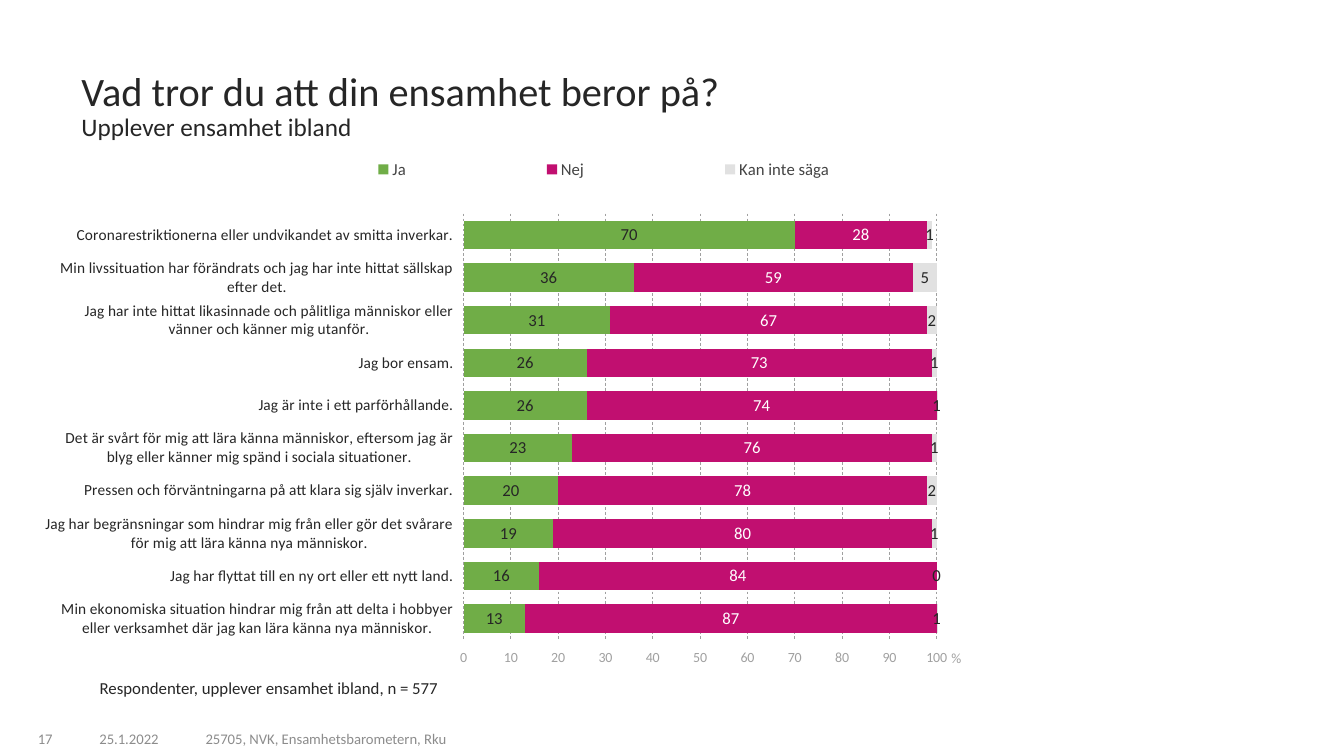
from lxml import etree
from pptx import Presentation
from pptx.chart.data import CategoryChartData
from pptx.dml.color import RGBColor
from pptx.enum.chart import (XL_CHART_TYPE, XL_LABEL_POSITION, XL_LEGEND_POSITION,
                             XL_TICK_LABEL_POSITION, XL_TICK_MARK)
from pptx.enum.dml import MSO_LINE
from pptx.enum.text import MSO_ANCHOR, PP_ALIGN
from pptx.oxml.ns import qn
from pptx.util import Inches, Pt

FONT = "Calibri"
INK = RGBColor(0x26, 0x26, 0x26)
BLACK = RGBColor(0, 0, 0)
WHITE = RGBColor(0xFF, 0xFF, 0xFF)
FOOTER_GREY = RGBColor(0x8C, 0x8C, 0x8C)
AXIS_GREY = RGBColor(0xA0, 0xA0, 0xA0)
LEGEND_GREY = RGBColor(0x44, 0x44, 0x44)
GREEN = RGBColor(0x70, 0xAD, 0x47)
MAGENTA = RGBColor(0xC1, 0x0F, 0x70)
PALE_GREY = RGBColor(0xE1, 0xE1, 0xE1)

REASONS = [
    "Coronarestriktionerna eller undvikandet av smitta inverkar.",
    "Min livssituation har förändrats och jag har inte hittat sällskap efter det.",
    "Jag har inte hittat likasinnade och pålitliga människor eller vänner och känner mig utanför.",
    "Jag bor ensam.",
    "Jag är inte i ett parförhållande.",
    "Det är svårt för mig att lära känna människor, eftersom jag är blyg eller känner mig spänd "
    "i sociala situationer.",
    "Pressen och förväntningarna på att klara sig själv inverkar.",
    "Jag har begränsningar som hindrar mig från eller gör det svårare för mig att lära känna nya "
    "människor.",
    "Jag har flyttat till en ny ort eller ett nytt land.",
    "Min ekonomiska situation hindrar mig från att delta i hobbyer eller verksamhet där jag kan "
    "lära känna nya människor.",
]
# Answer, shares in percent, bar colour, label colour
ANSWERS = [
    ("Ja", (70, 36, 31, 26, 26, 23, 20, 19, 16, 13), GREEN, INK),
    ("Nej", (28, 59, 67, 73, 74, 76, 78, 80, 84, 87), MAGENTA, WHITE),
    ("Kan inte säga", (1, 5, 2, 1, 1, 1, 2, 1, 0, 1), PALE_GREY, INK),
]


def set_font(font, size, color):
    font.name = FONT
    font.size = Pt(size)
    font.bold = False
    font.color.rgb = color


def add_text(slide, box, text, sizes, color, align=PP_ALIGN.LEFT,
             anchor=MSO_ANCHOR.TOP, line_spacing=None):
    """Place one paragraph; sizes holds one size for each line."""
    frame = slide.shapes.add_textbox(*map(Inches, box)).text_frame
    frame.word_wrap = True
    frame.vertical_anchor = anchor
    paragraph = frame.paragraphs[0]
    paragraph.text = text
    paragraph.alignment = align
    paragraph.line_spacing = line_spacing
    for run, size in zip(paragraph.runs, sizes):
        set_font(run.font, size, color)


def set_layout(parent, index, chart_size, place, inner=False):
    """Place a chart part at left, top[, width, height], in inches within the chart."""
    for old in parent.findall(qn("c:layout")):
        parent.remove(old)
    layout = etree.Element(qn("c:layout"))
    manual = etree.SubElement(layout, qn("c:manualLayout"))
    settings = [("layoutTarget", "inner")] if inner else []
    settings += [("xMode", "edge"), ("yMode", "edge")]
    fractions = [length / full for length, full in zip(place, chart_size * 2)]
    settings += zip("xywh", fractions)
    for tag, value in settings:
        etree.SubElement(manual, qn(f"c:{tag}")).set("val", str(value))
    parent.insert(index, layout)


def style_axes(chart, chart_size):
    reasons, percent = chart.category_axis, chart.value_axis
    for axis, size, color in ((reasons, 11, INK), (percent, 10, AXIS_GREY)):
        axis.major_tick_mark = axis.minor_tick_mark = XL_TICK_MARK.NONE
        axis.format.line.fill.background()
        set_font(axis.tick_labels.font, size, color)

    reasons.reverse_order = True
    reasons.tick_label_position = XL_TICK_LABEL_POSITION.LOW
    reasons.has_major_gridlines = False

    # The reversed reasons put the high end, and so the scale, at the bottom
    percent.tick_label_position = XL_TICK_LABEL_POSITION.HIGH
    percent.minimum_scale = 0
    percent.maximum_scale = 100.01
    percent.major_unit = 10
    percent.has_major_gridlines = True
    grid = percent.major_gridlines.format.line
    grid.color.rgb = AXIS_GREY
    grid.width = Pt(0.5)
    grid.dash_style = MSO_LINE.DASH

    # Unit sign at the end of the scale
    unit = percent.axis_title
    unit.text_frame.text = "%"
    set_font(unit.text_frame.paragraphs[0].runs[0].font, 10, AXIS_GREY)
    set_layout(unit._element, 1, chart_size, (8.96, 4.96))


def add_reasons_chart(slide, box):
    chart_size = box[2:]
    data = CategoryChartData(number_format="General")
    data.categories = REASONS
    for answer, shares, _, _ in ANSWERS:
        data.add_series(answer, shares)
    chart = slide.shapes.add_chart(
        XL_CHART_TYPE.BAR_STACKED, *map(Inches, box), data).chart
    chart.has_title = False
    set_font(chart.font, 12, BLACK)
    style_axes(chart, chart_size)

    # Bars and their values
    plot = chart.plots[0]
    plot.gap_width = 50
    plot.overlap = 100
    plot.vary_by_categories = False
    for series, (_, _, bar_color, label_color) in zip(plot.series, ANSWERS):
        series.format.fill.solid()
        series.format.fill.fore_color.rgb = bar_color
        series.invert_if_negative = False
        labels = series.data_labels
        labels.show_value = True
        labels.number_format = "#,##0"
        labels.number_format_is_linked = False
        labels.position = XL_LABEL_POSITION.CENTER
        set_font(labels.font, 12, label_color)
    plot_area = chart._chartSpace.chart.plotArea
    set_layout(plot_area, 0, chart_size, (4.12, 0.66, 4.72, 4.23), inner=True)

    # Legend
    chart.has_legend = True
    legend = chart.legend
    legend.position = XL_LEGEND_POSITION.TOP
    legend.include_in_layout = False
    set_font(legend.font, 12, LEGEND_GREY)
    set_layout(legend._element, 1, chart_size, (1.92, 0.01, 7.2, 0.42))


def add_footer(slide, left, top, height):
    parts = [
        ("17", 0, 0.59, PP_ALIGN.RIGHT),
        ("25.1.2022", 0.63, 1.24, PP_ALIGN.CENTER),
        ("25705, NVK, Ensamhetsbarometern, Rku", 1.91, 5.92, PP_ALIGN.LEFT),
    ]
    for text, offset, width, align in parts:
        add_text(slide, (left + offset, top, width, height), text, [10.5],
                 FOOTER_GREY, align, MSO_ANCHOR.BOTTOM)


def main():
    deck = Presentation()
    deck.slide_width, deck.slide_height = Inches(13.33), Inches(7.5)
    slide = deck.slides.add_slide(deck.slide_layouts[6])

    # Title and subtitle
    add_text(slide, (0.71, 0.72, 12.07, 0.68),
             "Vad tror du att din ensamhet beror på?\vUpplever ensamhet ibland",
             [28.8, 18], INK, anchor=MSO_ANCHOR.MIDDLE, line_spacing=0.9)
    add_reasons_chart(slide, (0.45, 1.46, 9.18, 5.24))
    # Respondents
    add_text(slide, (0.89, 6.7, 9.18, 0.28),
             "Respondenter, upplever ensamhet ibland, n = 577",
             [12], INK, line_spacing=0.9)
    add_footer(slide, 0.03, 7.16, 0.3)
    deck.save("out.pptx")


if __name__ == "__main__":
    main()
